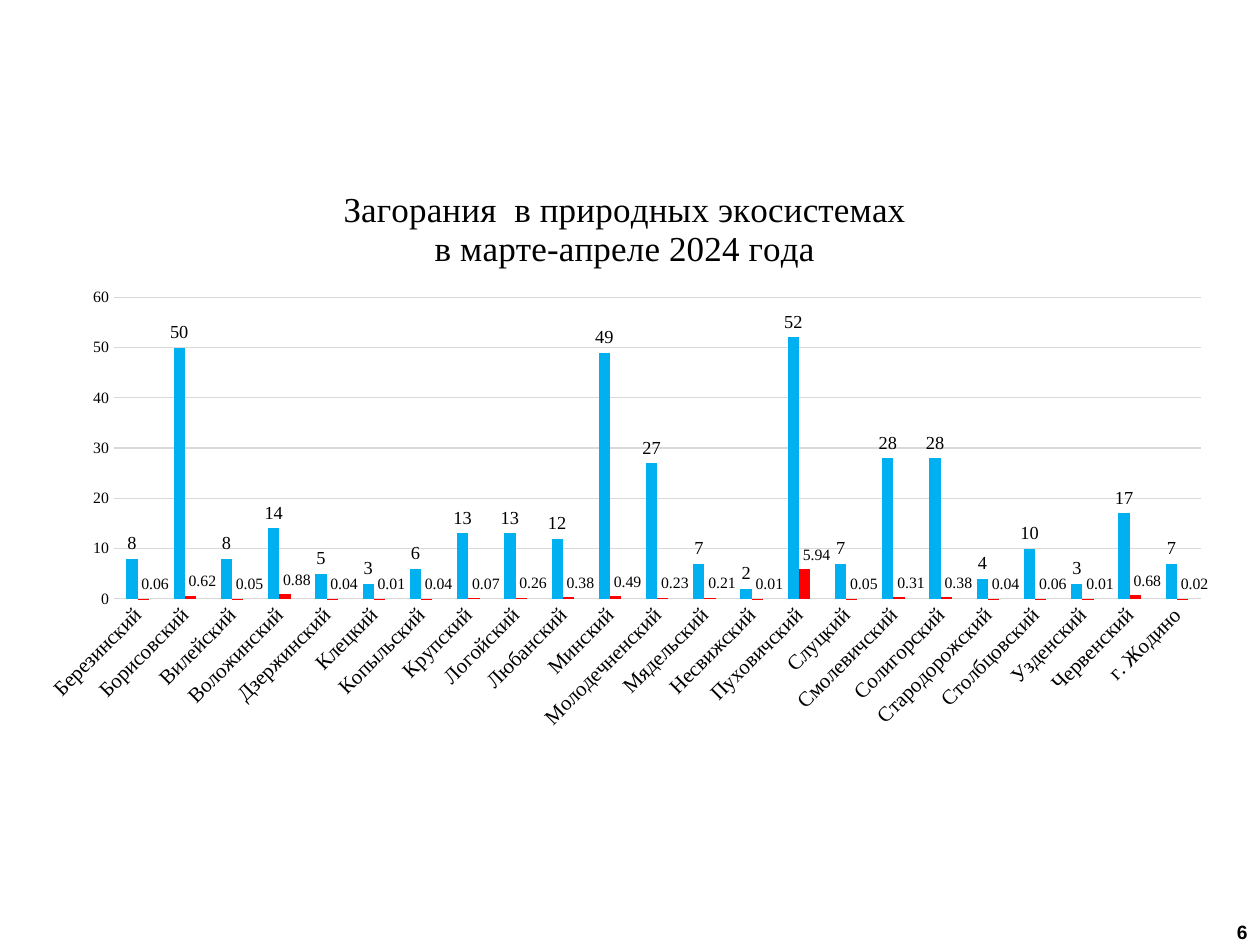
from lxml.etree import SubElement
from pptx import Presentation
from pptx.chart.data import CategoryChartData
from pptx.dml.color import RGBColor
from pptx.enum.chart import XL_CHART_TYPE, XL_LABEL_POSITION, XL_TICK_MARK
from pptx.enum.text import PP_ALIGN
from pptx.oxml import parse_xml
from pptx.oxml.ns import nsdecls, qn
from pptx.util import Inches, Pt

TITLE = ["Загорания  в природных экосистемах", "в марте-апреле 2024 года"]
PAGE = "6"
SERIES = [
    {"format": "General", "color": "fires", "size": 10.5},
    {"format": "0.00", "color": "area", "size": 9},
]
DISTRICTS = [
    ("Березинский", 8, 0.06), ("Борисовский", 50, 0.62), ("Вилейский", 8, 0.05),
    ("Воложинский", 14, 0.88), ("Дзержинский", 5, 0.04), ("Клецкий", 3, 0.01),
    ("Копыльский", 6, 0.04), ("Крупский", 13, 0.07), ("Логойский", 13, 0.26),
    ("Любанский", 12, 0.38), ("Минский", 49, 0.49), ("Молодечненский", 27, 0.23),
    ("Мядельский", 7, 0.21), ("Несвижский", 2, 0.01), ("Пуховичский", 52, 5.94),
    ("Слуцкий", 7, 0.05), ("Смолевичский", 28, 0.31), ("Солигорский", 28, 0.38),
    ("Стародорожский", 4, 0.04), ("Столбцовский", 10, 0.06), ("Узденский", 3, 0.01),
    ("Червенский", 17, 0.68), ("г. Жодино", 7, 0.02),
]
COLORS = {"text": "000000", "grid": "D9D9D9", "fires": "00B0F0", "area": "FF0000"}
SERIF = "Times New Roman"
W, H = 10, 7.5
CHART_BOX = (0.02 * W, 0.175 * H, 0.952 * W, 0.665 * H)
PAGE_BOX = (0.792 * W, 0.967 * H, 0.208 * W, 0.033 * H)
PLOT = {"layoutTarget": "inner", "xMode": "edge", "yMode": "edge",
        "x": 0.074, "y": 0.21, "w": 0.906, "h": 0.48}
LABEL_SHIFT = {"x": 0.01, "y": 0}


def rgb(name):
    return RGBColor.from_string(COLORS[name])


def style(font, size, name=SERIF, bold=False):
    for key, value in {"size": Pt(size), "name": name, "bold": bold}.items():
        setattr(font, key, value)
    font.color.rgb = rgb("text")


def rule(line):
    line.color.rgb = rgb("grid")
    line.width = Pt(0.75)


def layout(values):
    element = parse_xml(f"<c:layout {nsdecls('c')}/>")
    manual = SubElement(element, qn("c:manualLayout"))
    for key, value in values.items():
        SubElement(manual, qn(f"c:{key}")).set("val", str(value))
    return element


def add_fire_chart(slide):
    names, *columns = zip(*DISTRICTS)
    data = CategoryChartData()
    data.categories = names
    for info, values in zip(SERIES, columns):
        data.add_series("", values, info["format"])
    chart = slide.shapes.add_chart(
        XL_CHART_TYPE.COLUMN_CLUSTERED, *map(Inches, CHART_BOX), data).chart
    style(chart.font, 10)
    chart.has_legend = False

    tf = chart.chart_title.text_frame
    for i, text in enumerate(TITLE):
        p = tf.add_paragraph() if i else tf.paragraphs[0]
        p.alignment = PP_ALIGN.CENTER
        r = p.add_run()
        r.text = text
        style(r.font, 20)
    chart.chart_title.include_in_layout = False

    area = chart.plots[0]._element.getparent()
    for old in area.findall(qn("c:layout")):
        area.remove(old)
    area.insert(0, layout(PLOT))

    for axis, size in ((chart.category_axis, 12), (chart.value_axis, 9)):
        axis.major_tick_mark = axis.minor_tick_mark = XL_TICK_MARK.NONE
        style(axis.tick_labels.font, size)
    rule(chart.category_axis.format.line)
    body = chart.category_axis._element.find(qn("c:txPr")).find(qn("a:bodyPr"))
    body.set("rot", "-2700000")
    body.set("vert", "horz")
    value_axis = chart.value_axis
    for key, value in {"minimum_scale": 0, "maximum_scale": 60, "major_unit": 10}.items():
        setattr(value_axis, key, value)
    value_axis.format.line.fill.background()
    rule(value_axis.major_gridlines.format.line)

    plot = chart.plots[0]
    for key, value in {"gap_width": 219, "overlap": 0, "vary_by_categories": False}.items():
        setattr(plot, key, value)
    for info, series in zip(SERIES, plot.series):
        series.format.fill.solid()
        series.format.fill.fore_color.rgb = rgb(info["color"])
        labels = series.data_labels
        labels.show_value = True
        labels.position = XL_LABEL_POSITION.OUTSIDE_END
        labels.number_format = info["format"]
        labels.number_format_is_linked = False
        style(labels.font, info["size"])

    area_series = plot.series[1]
    for i in range(len(DISTRICTS)):
        label = area_series.points[i].data_label
        style(label.font, SERIES[1]["size"])
        label.position = XL_LABEL_POSITION.OUTSIDE_END
    for item in area_series._element.iter(qn("c:dLbl")):
        item.insert(1, layout(LABEL_SHIFT))


def add_page_number(slide):
    tf = slide.shapes.add_textbox(*map(Inches, PAGE_BOX)).text_frame
    tf.word_wrap = True
    p = tf.paragraphs[0]
    p.alignment = PP_ALIGN.RIGHT
    r = p.add_run()
    r.text = PAGE
    style(r.font, 11, "Arial", True)


def main():
    prs = Presentation()
    prs.slide_width, prs.slide_height = Inches(W), Inches(H)
    s = prs.slides.add_slide(prs.slide_layouts[6])
    add_fire_chart(s)
    add_page_number(s)
    prs.save("out.pptx")


if __name__ == "__main__":
    main()
